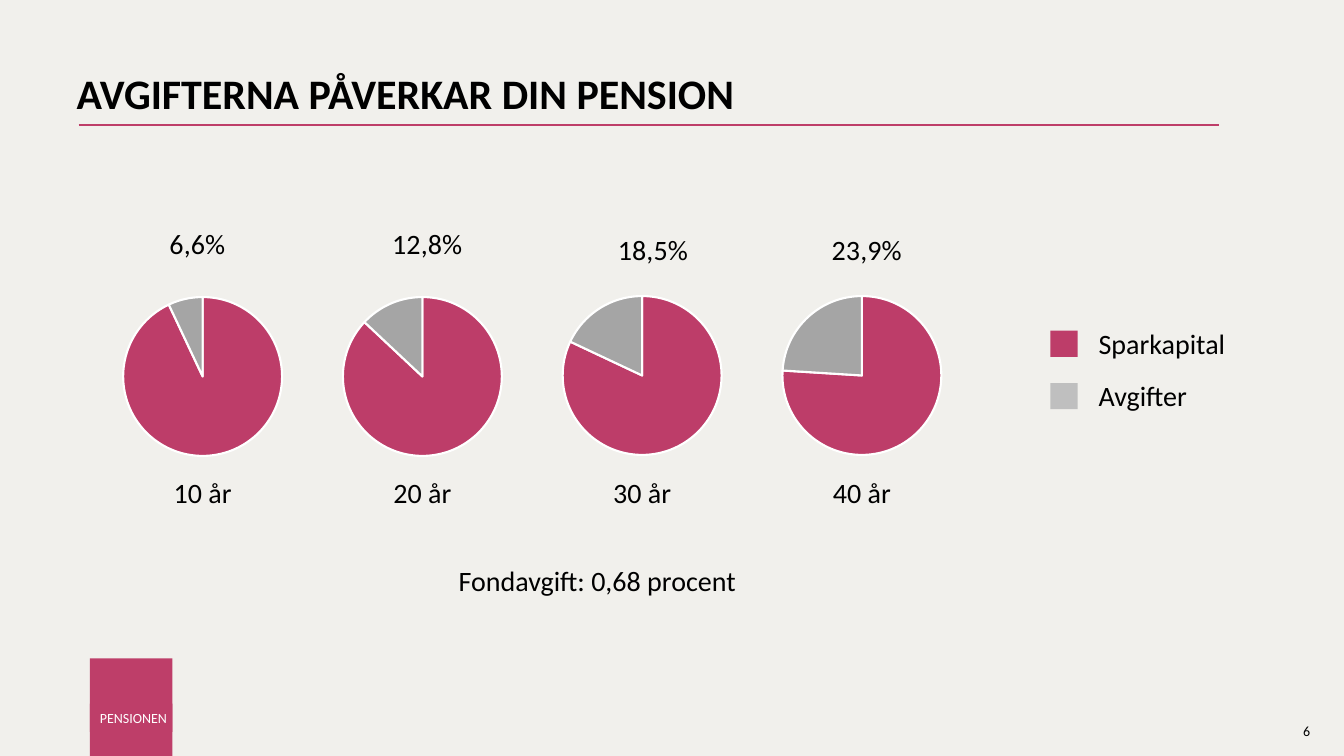
from dataclasses import dataclass

import pptx
import pptx.chart.data
import pptx.dml.color
import pptx.enum.chart
import pptx.enum.shapes
import pptx.enum.text
import pptx.oxml
import pptx.oxml.ns
import pptx.util
from lxml import etree

qn = pptx.oxml.ns.qn
ALIGN = pptx.enum.text.PP_ALIGN
ANCHOR = pptx.enum.text.MSO_ANCHOR

COLORS = {
    "background": "F1F0EC",
    "brand": "BE3E69",
    "savings": "BD3D69",
    "fees": "A5A5A5",
    "fees_key": "BFBFBF",
    "text": "000000",
    "white": "FFFFFF",
}
FONT = "Calibri"
SLIDE_WIDTH = pptx.util.Inches(13.33)
SLIDE_HEIGHT = pptx.util.Inches(7.5)


@dataclass(frozen=True)
class Box:
    """A frame in percent of the slide's width and height."""
    left: float
    top: float
    width: float
    height: float

    def frame(self) -> tuple[int, int, int, int]:
        return (across(self.left), down(self.top), across(self.width), down(self.height))


@dataclass(frozen=True)
class Pie:
    fee_label: str
    years: str
    savings: int
    fees: int
    top: float
    title_x: float
    title_y: float


@dataclass(frozen=True)
class LegendEntry:
    label: str
    color: str


PIES = [
    Pie("6,6%", "10 år", 93, 7, 28.13, 0.37, 0.02),
    Pie("12,8%", "20 år", 87, 13, 28.13, 0.38, 0.02),
    Pie("18,5%", "30 år", 82, 18, 28, 0.4, 0.04),
    Pie("23,9%", "40 år", 76, 24, 28, 0.38, 0.04),
]
PIE_LEFT, PIE_STEP, PIE_WIDTH, PIE_HEIGHT = 4.13, 16.35, 21.9, 42.93
YEARS_WIDTH = 6.4
LEGEND = [LegendEntry("Sparkapital", "savings"), LegendEntry("Avgifter", "fees_key")]
LEGEND_STEP = 6.93


def across(percent: float) -> int:
    return round(SLIDE_WIDTH * percent / 100)


def down(percent: float) -> int:
    return round(SLIDE_HEIGHT * percent / 100)


def rgb(name: str) -> pptx.dml.color.RGBColor:
    return pptx.dml.color.RGBColor.from_string(COLORS[name])


def style_font(font, size: float, color: str = "text", bold: bool = False) -> None:
    font.name = FONT
    font.size = pptx.util.Pt(size)
    font.bold = bold
    font.color.rgb = rgb(color)


def add_label(slide, box: Box, text: str, size: float = 20, align=ALIGN.LEFT, wrap: bool = True):
    shape = slide.shapes.add_textbox(*box.frame())
    shape.text_frame.word_wrap = wrap
    paragraph = shape.text_frame.paragraphs[0]
    paragraph.text = text
    paragraph.alignment = align
    style_font(paragraph.font, size)
    return paragraph


def add_block(slide, box: Box, color: str) -> None:
    shape = slide.shapes.add_shape(pptx.enum.shapes.MSO_SHAPE.RECTANGLE, *box.frame())
    shape.shadow.inherit = False
    shape.fill.solid()
    shape.fill.fore_color.rgb = rgb(color)
    shape.line.fill.background()


def fill_placeholder(shape, box: Box, text: str, anchor):
    shape.left, shape.top, shape.width, shape.height = box.frame()
    frame = shape.text_frame
    frame.auto_size = pptx.enum.text.MSO_AUTO_SIZE.NONE
    frame.vertical_anchor = anchor
    paragraph = frame.paragraphs[0]
    paragraph.text = text
    paragraph.alignment = ALIGN.LEFT
    paragraph.line_spacing = 0.9
    paragraph.space_before = pptx.util.Pt(0)
    return paragraph


def set_manual_layout(parent, index: int, **settings) -> None:
    """Fix the place of a chart part, in shares of the chart's size."""
    for old in parent.findall(qn("c:layout")):
        parent.remove(old)
    layout = etree.Element(qn("c:layout"))
    manual = etree.SubElement(layout, qn("c:manualLayout"))
    for name, value in settings.items():
        etree.SubElement(manual, qn(f"c:{name}")).set("val", str(value))
    parent.insert(index, layout)


def add_pie(slide, pie: Pie, left: float) -> None:
    data = pptx.chart.data.CategoryChartData()
    data.categories = ["1", "2", "3"]
    data.add_series("Series 1", [pie.savings, None, pie.fees])
    box = Box(left, pie.top, PIE_WIDTH, PIE_HEIGHT)
    chart = slide.shapes.add_chart(
        pptx.enum.chart.XL_CHART_TYPE.PIE, *box.frame(), data).chart
    style_font(chart.font, 10)
    chart.has_legend = False

    chart.has_title = True
    title = chart.chart_title
    paragraph = title.text_frame.paragraphs[0]
    paragraph.text = pie.fee_label
    style_font(paragraph.font, 20)
    title.include_in_layout = False
    set_manual_layout(title.element if hasattr(title, "element") else title._element, 1,
                      xMode="edge", yMode="edge", x=pie.title_x, y=pie.title_y)

    chart_element = chart.element.find(qn("c:chart"))
    set_manual_layout(chart_element.find(qn("c:plotArea")), 0, layoutTarget="inner",
                      xMode="edge", yMode="edge", x=0.23, y=0.1, w=0.54, h=0.81)
    background = etree.Element(qn("c:spPr"))
    etree.SubElement(background, qn("a:noFill"))
    line = etree.SubElement(background, qn("a:ln"))
    etree.SubElement(line, qn("a:noFill"))
    chart_element.addnext(background)

    series = chart.plots[0].series[0]
    for index, color in ((0, "savings"), (2, "fees")):
        slice_format = series.points[index].format
        slice_format.fill.solid()
        slice_format.fill.fore_color.rgb = rgb(color)
        slice_format.line.color.rgb = rgb("white")
        slice_format.line.width = pptx.util.Pt(1.5)


def add_rule(slide, left: float, right: float, top: float) -> None:
    rule = slide.shapes.add_connector(
        pptx.enum.shapes.MSO_CONNECTOR.STRAIGHT,
        across(left), down(top), across(right), down(top))
    rule.line.color.rgb = rgb("brand")
    rule.line.width = pptx.util.Pt(1.5)
    etree.SubElement(rule._element.spPr, qn("a:effectLst"))


def add_section_tag(slide, shape) -> None:
    add_block(slide, Box(6.68, 87.07, 6.15, 12.93), "brand")
    slide.shapes._spTree.append(shape._element)
    paragraph = fill_placeholder(shape, Box(6.68, 93.07, 6.15, 3.73), "PENSIONEN", ANCHOR.MIDDLE)
    shape.fill.solid()
    shape.fill.fore_color.rgb = rgb("brand")
    frame = shape.text_frame
    frame.word_wrap = False
    frame.margin_left, frame.margin_top, frame.margin_right, frame.margin_bottom = (
        pptx.util.Inches(inset) for inset in (0.1, 0.08, 0.04, 0.05))
    properties = paragraph._p.get_or_add_pPr()
    properties.set("marL", "0")
    properties.set("indent", "0")
    etree.SubElement(properties, qn("a:buNone"))
    style_font(paragraph.font, 10, "white")


def main() -> None:
    presentation = pptx.Presentation()
    presentation.slide_width, presentation.slide_height = SLIDE_WIDTH, SLIDE_HEIGHT
    slide = presentation.slides.add_slide(presentation.slide_layouts[1])
    slide.background.fill.solid()
    slide.background.fill.fore_color.rgb = rgb("background")

    add_label(slide, Box(96.22, 94.93, 3, 3.6), "6", size=10)
    add_rule(slide, 5.85, 90.68, 16.53)
    title = fill_placeholder(slide.shapes.title, Box(4.95, 9.07, 86.25, 19.33),
                             "AVGIFTERNA PÅVERKAR DIN PENSION", ANCHOR.TOP)
    style_font(title.font, 30, bold=True)

    for row, entry in enumerate(LEGEND):
        offset = row * LEGEND_STEP
        add_block(slide, Box(78.15, 43.73 + offset, 2.03, 3.47), entry.color)
        add_label(slide, Box(81, 42.53 + offset, 12.98, 5.87), entry.label)
    fee = add_label(slide, Box(33.38, 74.4, 22.35, 5.33), "Fondavgift: 0,68 procent", wrap=False)
    fee.line_spacing = 0.9

    for column, pie in enumerate(PIES):
        left = PIE_LEFT + column * PIE_STEP
        add_pie(slide, pie, left)
        years_left = left + (PIE_WIDTH - YEARS_WIDTH) / 2
        add_label(slide, Box(years_left, 62.27, YEARS_WIDTH, 5.87), pie.years, align=ALIGN.CENTER)

    add_section_tag(slide, slide.placeholders[1])
    presentation.save("out.pptx")


if __name__ == "__main__":
    main()
